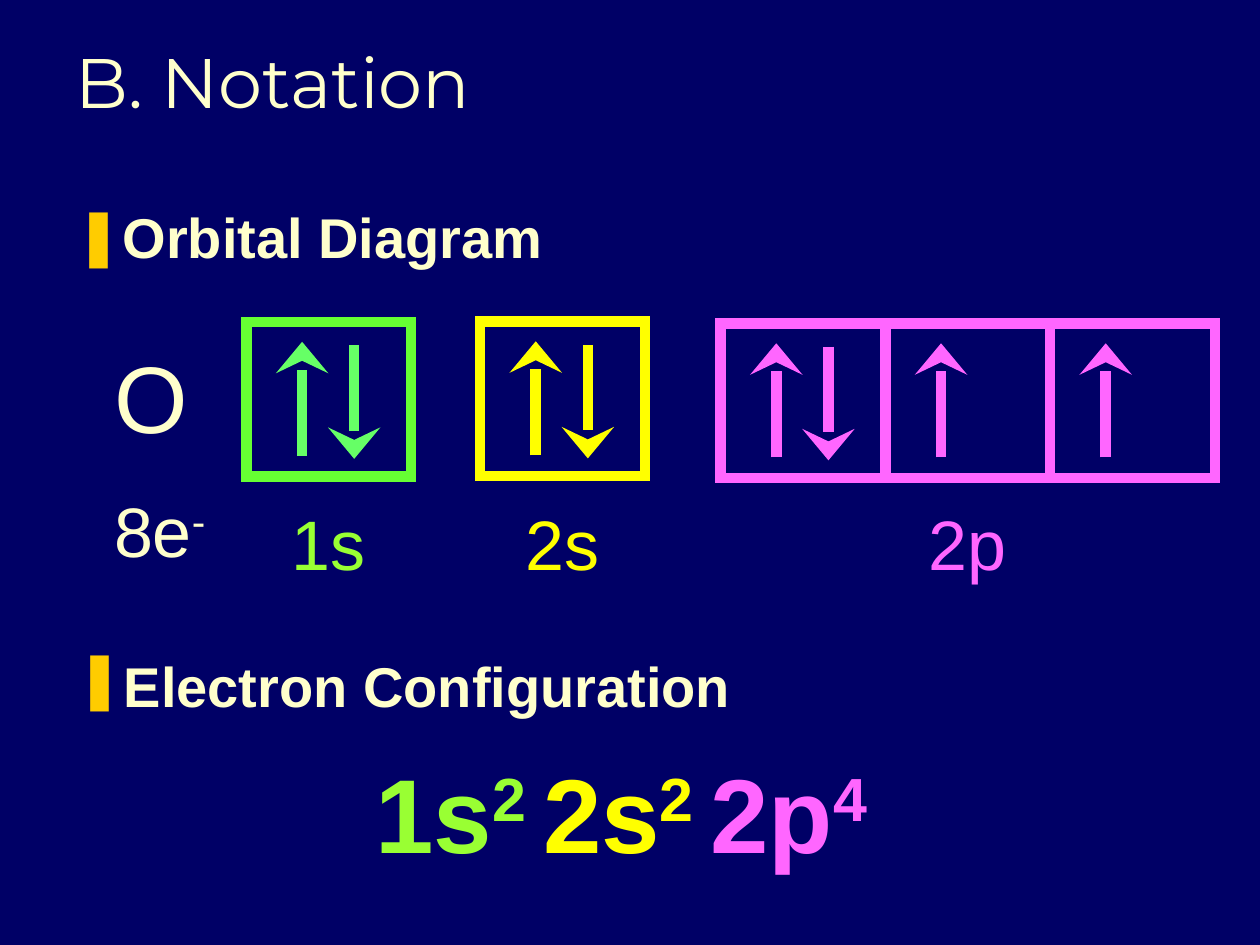
from lxml import etree
from pptx import Presentation
from pptx.dml import color
from pptx.enum import shapes, text
from pptx.oxml import ns
from pptx.util import Cm, Pt

CREAM, GOLD, GREEN, YELLOW, PINK = "FFFFCC", "FFCC00", "99FF33", "FFFF00", "FF66FF"


def rgb(value):
    return color.RGBColor.from_string(value)


def write(p, pieces, size, bold=False, font="Arial"):
    """Add (text, colour, is superscript) pieces to a paragraph."""
    for content, colour, raised in pieces:
        r = p.add_run()
        r.text = content
        r.font.name, r.font.size, r.font.bold = font, Pt(size), bold
        r.font.color.rgb = rgb(colour)
        if raised:
            r._r.get_or_add_rPr().set("baseline", "30000")


prs = Presentation()
prs.slide_width, prs.slide_height = Cm(25.4), Cm(19.05)
s = prs.slides.add_slide(prs.slide_layouts[1])
s.background.fill.solid()
s.background.fill.fore_color.rgb = rgb("000066")

# Title
title = s.shapes.title
title.left, title.top, title.width, title.height = Cm(1.27), Cm(0.42), Cm(21.44), Cm(2.18)
tf = title.text_frame
tf.vertical_anchor = text.MSO_ANCHOR.BOTTOM
p = tf.paragraphs[0]
p.alignment = text.PP_ALIGN.LEFT
write(p, [("B. Notation", CREAM, False)], 40, font="Montserrat")

# Bulleted headings
body = s.placeholders[1]
body.left, body.top, body.width, body.height = Cm(1.27), Cm(3.96), Cm(22.71), Cm(2.64)
second = s.shapes.add_textbox(Cm(1.3), Cm(12.6), Cm(22.71), Cm(2.39))
for sp, heading, spacing in ((body, "Orbital Diagram", 1), (second, "Electron Configuration", 1.3)):
    tf = sp.text_frame
    tf.word_wrap = True
    tf.auto_size = text.MSO_AUTO_SIZE.NONE
    p = tf.paragraphs[0]
    pPr = p._p.get_or_add_pPr()
    pPr.set("marL", str(Cm(0.79)))
    pPr.set("indent", str(-Cm(0.79)))
    bullet_color = etree.SubElement(pPr, ns.qn("a:buClr"))
    etree.SubElement(bullet_color, ns.qn("a:srgbClr"), val=GOLD)
    etree.SubElement(pPr, ns.qn("a:buChar"), char="❚")
    p.line_spacing = spacing
    p.space_before = Pt(0)
    write(p, [(heading, CREAM, False)], 32, bold=True)

# Element symbol and electron count
tf = s.shapes.add_textbox(Cm(0.48), Cm(6.71), Cm(4.62), Cm(5.08)).text_frame
tf.word_wrap = True
tf.margin_left = Cm(1.82)
write(tf.paragraphs[0], [("O", CREAM, False)], 54)
p = tf.add_paragraph()
p.space_before = Pt(20)
write(p, [("8e", CREAM, False), ("-", CREAM, True)], 40)

# Orbitals: name, left, top, box colour, label colour, arrow colour, electrons per box
BOX_W, BOX_H = 3.32, 3.12
LABEL_W = 2.6
UP, DOWN = (1.12, 2.7, 0.4), (2.17, 0.47, 2.76)  # x, start y, end y inside a box
orbitals = [
    ("1s", 4.97, 6.49, "66FF33", GREEN, "66FF66", [2]),
    ("2s", 9.68, 6.48, YELLOW, YELLOW, YELLOW, [2]),
    ("2p", 14.53, 6.52, PINK, PINK, PINK, [2, 1, 1]),
]
for name, left, top, box_color, label_color, arrow_color, electrons in orbitals:
    group = s.shapes.add_group_shape()

    # Label centred below the boxes
    center = left + BOX_W * len(electrons) / 2
    label = group.shapes.add_textbox(Cm(center - LABEL_W / 2), Cm(9.45), Cm(LABEL_W), Cm(2.46))
    tf = label.text_frame
    tf.word_wrap = False
    p = tf.paragraphs[0]
    p.alignment = text.PP_ALIGN.CENTER
    p.line_spacing = 1.3
    write(p, [(name, label_color, False)], 40)

    for i, count in enumerate(electrons):
        x = left + i * BOX_W
        box = group.shapes.add_shape(shapes.MSO_SHAPE.RECTANGLE, Cm(x), Cm(top), Cm(BOX_W), Cm(BOX_H))
        box.shadow.inherit = False
        box.fill.background()
        box.line.color.rgb = rgb(box_color)
        box.line.width = Pt(6)
        etree.SubElement(box.line._get_or_add_ln(), ns.qn("a:miter"), lim="800000")

        # Electron spins
        for dx, start, end in (UP, DOWN)[:count]:
            arrow = s.shapes.add_connector(shapes.MSO_CONNECTOR.STRAIGHT, Cm(x + dx), Cm(top + start),
                                           Cm(x + dx), Cm(top + end))
            arrow.line.color.rgb = rgb(arrow_color)
            arrow.line.width = Pt(6)
            etree.SubElement(arrow.line._get_or_add_ln(), ns.qn("a:tailEnd"), type="stealth", w="lg")
            etree.SubElement(arrow._element.spPr, ns.qn("a:effectLst"))

# Electron configuration
tf = s.shapes.add_textbox(Cm(7.32), Cm(14.2), Cm(11.02), Cm(3.56)).text_frame
tf.word_wrap = True
p = tf.paragraphs[0]
p.line_spacing = 1.3
write(p, [("1s", GREEN, False), ("2 ", GREEN, True), ("2s", YELLOW, False),
          ("2 ", YELLOW, True), ("2p", PINK, False), ("4", PINK, True)], 60, bold=True)

prs.save("out.pptx")
